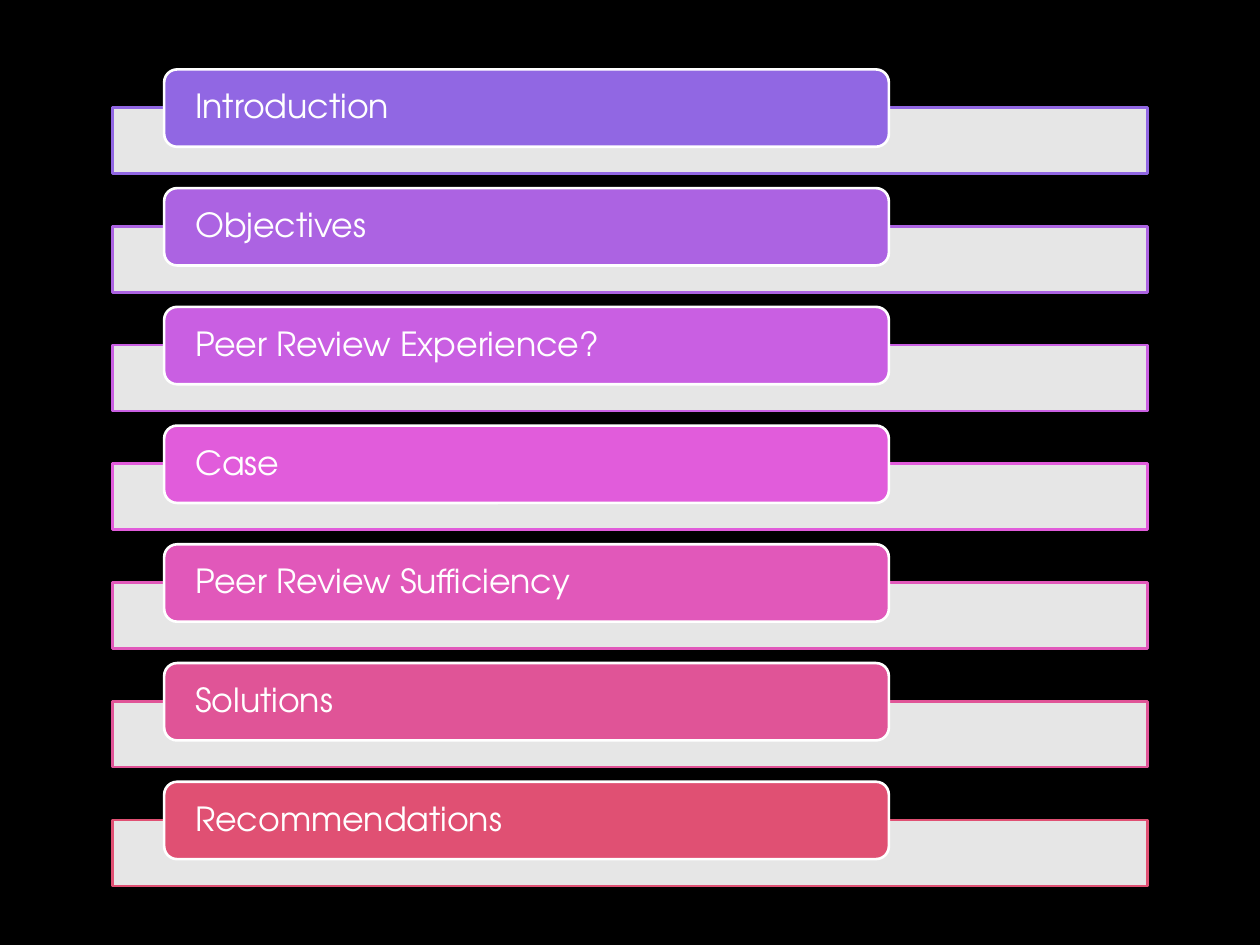
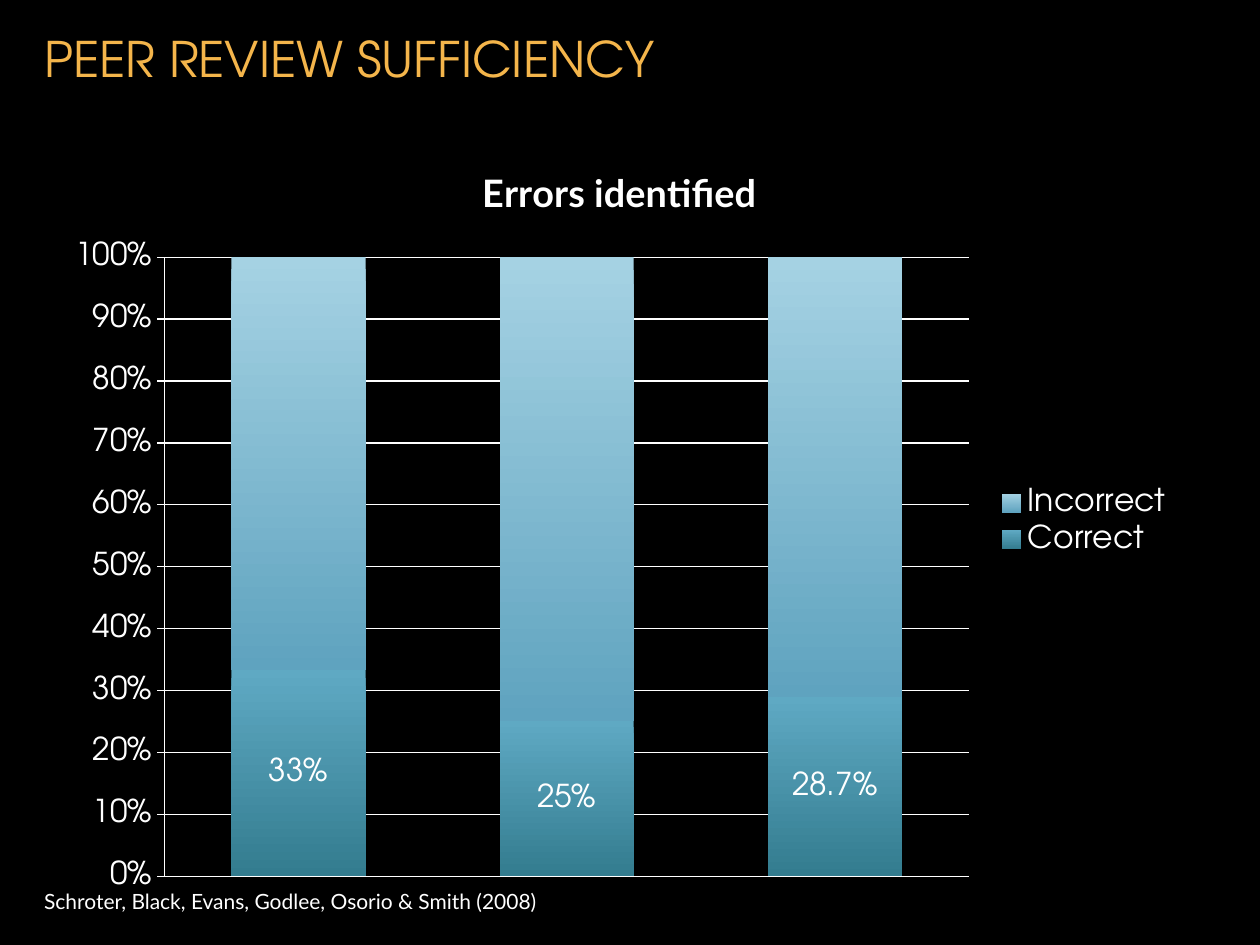
from dataclasses import dataclass

from lxml.etree import SubElement
from pptx import Presentation
from pptx.chart.data import CategoryChartData
from pptx.dml.color import RGBColor
from pptx.enum.chart import XL_CHART_TYPE as ChartType
from pptx.enum.chart import XL_LABEL_POSITION as LabelPosition
from pptx.enum.chart import XL_LEGEND_POSITION as LegendPosition
from pptx.enum.chart import XL_TICK_MARK as TickMark
from pptx.enum.shapes import MSO_SHAPE as Shape
from pptx.enum.text import MSO_ANCHOR as Anchor
from pptx.enum.text import MSO_AUTO_SIZE as AutoSize
from pptx.enum.text import PP_ALIGN as Align
from pptx.oxml.ns import qn
from pptx.util import Cm, Pt


@dataclass(frozen=True)
class Theme:
    background: str = "000000"
    text: str = "FFFFFF"
    title: str = "F4B54B"
    heading_font: str = "TeX Gyre Adventor"
    plain_font: str = "Lato"
    title_size: float = 28
    chart_title_size: float = 21.6
    agenda_size: float = 19
    chart_size: float = 18
    source_size: float = 12
    outline: float = 1.5
    bar_opacity: int = 90
    correct: tuple = ("5FA9C3", "337C8F")
    incorrect: tuple = ("A5D2E3", "5FA3BF")


AGENDA = {
    "Introduction": "9167E3",
    "Objectives": "AC63E2",
    "Peer Review Experience?": "C95FE2",
    "Case": "E15CDB",
    "Peer Review Sufficiency": "E158BA",
    "Solutions": "E05497",
    "Recommendations": "E05073",
}
FIRST_TOP, LAST_TOP = 1.4, 15.76
TITLE_ONLY, BLANK = 5, 6


def rgb(value):
    return RGBColor.from_string(value)


def apply(target, **values):
    for name, value in values.items():
        setattr(target, name, value)


class Deck:
    def __init__(self, theme):
        self.theme = theme
        self.presentation = Presentation()
        apply(self.presentation, slide_width=Cm(25.4), slide_height=Cm(19.05))
        fill = self.presentation.slide_master.background.fill
        fill.solid()
        fill.fore_color.rgb = rgb(theme.background)
        self.page = None

    def add_page(self, layout):
        layouts = self.presentation.slide_layouts
        self.page = self.presentation.slides.add_slide(layouts[layout])

    def style_font(self, font, size, name=None, color=None, bold=False):
        apply(font, size=Pt(size), name=name or self.theme.heading_font, bold=bold)
        font.color.rgb = rgb(color or self.theme.text)

    def title(self, text, left, top, width, height):
        box = self.page.shapes.title
        apply(box, left=Cm(left), top=Cm(top), width=Cm(width), height=Cm(height))
        box.text_frame.vertical_anchor = Anchor.MIDDLE
        para = box.text_frame.paragraphs[0]
        para.alignment = Align.LEFT
        span = para.add_run()
        span.text = text
        self.style_font(span.font, self.theme.title_size, color=self.theme.title)

    def panel(self, kind, left, top, width, height, fill, line):
        panel = self.page.shapes.add_shape(
            kind, Cm(left), Cm(top), Cm(width), Cm(height))
        panel.shadow.inherit = False
        panel.fill.solid()
        panel.fill.fore_color.rgb = rgb(fill)
        panel.line.color.rgb = rgb(line)
        panel.line.width = Pt(self.theme.outline)
        return panel

    def agenda_item(self, text, top, color):
        """Draw a translucent bar with a coloured label overlapping its top."""
        white = self.theme.text
        bar = self.panel(Shape.RECTANGLE, 2.27, top + 0.77, 20.87, 1.33, white, color)
        bar_color = bar.element.xpath("p:spPr/a:solidFill/a:srgbClr")[0]
        SubElement(bar_color, qn("a:alpha"), val=str(self.theme.bar_opacity * 1000))

        label = self.panel(
            Shape.ROUNDED_RECTANGLE, 3.31, top, 14.61, 1.56, color, white)
        frame = label.text_frame
        apply(frame, margin_left=Cm(0.55), margin_right=Cm(0.55), margin_top=0,
              margin_bottom=0, word_wrap=True, vertical_anchor=Anchor.MIDDLE)
        para = frame.paragraphs[0]
        apply(para, alignment=Align.LEFT, line_spacing=0.9)
        span = para.add_run()
        span.text = text
        self.style_font(span.font, self.theme.agenda_size)

    def text(self, text, left, top, width, height):
        box = self.page.shapes.add_textbox(Cm(left), Cm(top), Cm(width), Cm(height))
        apply(box.text_frame, word_wrap=False, auto_size=AutoSize.SHAPE_TO_FIT_TEXT)
        span = box.text_frame.paragraphs[0].add_run()
        span.text = text
        self.style_font(span.font, self.theme.source_size, self.theme.plain_font)

    def stacked_chart(self, title, series, labels, left, top, width, height):
        """Add a 100% stacked chart; series maps names to (values, gradient)."""
        data = CategoryChartData()
        data.categories = [str(n + 1) for n in range(len(labels))]
        for name, (values, _) in series.items():
            data.add_series(name, values)
        chart = self.page.shapes.add_chart(
            ChartType.COLUMN_STACKED_100, Cm(left), Cm(top), Cm(width), Cm(height),
            data).chart
        self.style_font(chart.font, self.theme.chart_size)

        chart.has_title = True
        chart.chart_title.include_in_layout = False
        span = chart.chart_title.text_frame.paragraphs[0].add_run()
        span.text = title
        self.style_font(span.font, self.theme.chart_title_size,
                        self.theme.plain_font, bold=True)

        chart.has_legend = True
        apply(chart.legend, position=LegendPosition.RIGHT, include_in_layout=False)
        chart.category_axis.visible = False
        axis = chart.value_axis
        apply(axis, has_major_gridlines=True, major_tick_mark=TickMark.OUTSIDE,
              major_unit=0.1)
        apply(axis.tick_labels, number_format="0%", number_format_is_linked=False)
        for line in (axis.format.line, axis.major_gridlines.format.line):
            line.color.rgb = rgb(self.theme.text)
            line.width = Pt(0.75)

        plot = chart.plots[0]
        apply(plot, gap_width=100, overlap=100, vary_by_categories=False)
        for column, (_, gradient) in zip(plot.series, series.values()):
            fill = column.format.fill
            fill.gradient()
            fill.gradient_angle = 270
            for stop, color in zip(fill.gradient_stops, gradient):
                stop.color.rgb = rgb(color)
        self.label_columns(plot.series[0], labels)

    def label_columns(self, column, labels):
        column.data_labels.show_value = True
        for index, text in enumerate(labels):
            label = column.points[index].data_label
            span = label.text_frame.paragraphs[0].add_run()
            span.text = text
            self.style_font(span.font, self.theme.chart_size)
            label.position = LabelPosition.CENTER


def agenda_page(deck):
    deck.add_page(BLANK)
    pitch = (LAST_TOP - FIRST_TOP) / (len(AGENDA) - 1)
    for row, (topic, color) in enumerate(AGENDA.items()):
        deck.agenda_item(topic, FIRST_TOP + row * pitch, color)


def sufficiency_page(deck):
    deck.add_page(TITLE_ONLY)
    deck.title("PEER REVIEW SUFFICIENCY", 0.64, -0.43, 22.86, 3.18)
    series = {
        "Correct": ((3, 2, 2.6), deck.theme.correct),
        "Incorrect": ((6, 6, 6.4), deck.theme.incorrect),
    }
    deck.stacked_chart("Errors identified", series, ("33%", "25%", "28.7%"),
                       1.06, 2.74, 22.86, 15.54)
    deck.text("Schroter, Black, Evans, Godlee, Osorio & Smith (2008)",
              0.64, 17.79, 10.95, 0.76)


def main():
    deck = Deck(Theme())
    agenda_page(deck)
    sufficiency_page(deck)
    deck.presentation.save("out.pptx")


if __name__ == "__main__":
    main()
